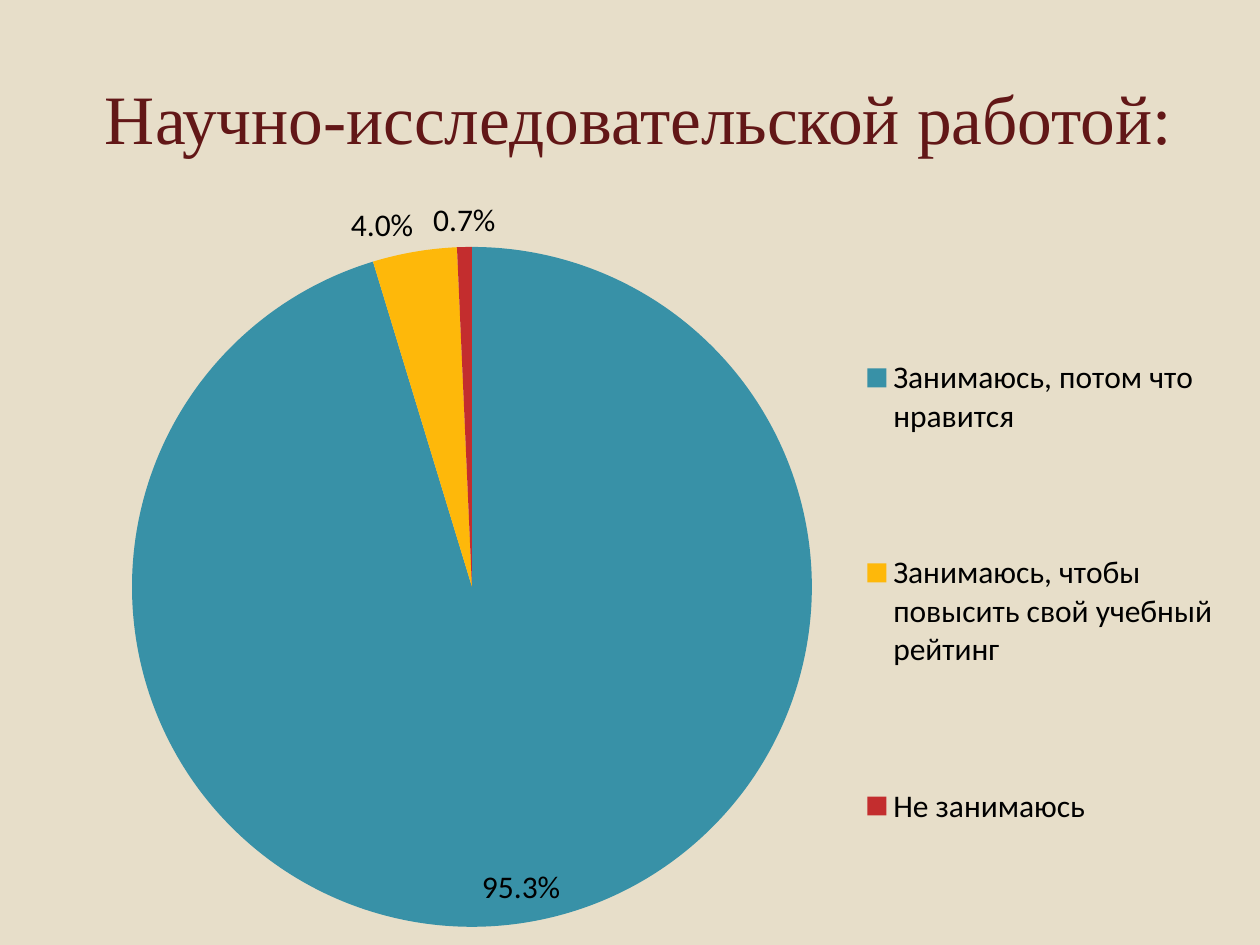
from lxml import etree
from pptx import Presentation
from pptx import util as u
from pptx.chart.data import CategoryChartData
from pptx.dml.color import RGBColor
from pptx.enum import chart as ch, text
from pptx.oxml.ns import qn

PX = u.Inches(1) // 126
COLORS = {
    "background": "E7DEC9",
    "title": "621717",
    "text": "000000",
}
ANSWERS = [
    ("Занимаюсь, потом что нравится", 95.3, "3891A7"),
    ("Занимаюсь, чтобы повысить свой учебный рейтинг", 4, "FEB80A"),
    ("Не занимаюсь", 0.7, "C32D2E"),
]
CHART_LEFT, CHART_TOP, CHART_WIDTH, CHART_HEIGHT = 84, 185, 1150, 760


def manual_layout(left, top, width, height, inner=False):
    layout = etree.Element(qn("c:layout"))
    manual = etree.SubElement(layout, qn("c:manualLayout"))
    settings = [("layoutTarget", "inner")] if inner else []
    settings += [
        ("xMode", "edge"),
        ("yMode", "edge"),
        ("x", (left - CHART_LEFT) / CHART_WIDTH),
        ("y", (top - CHART_TOP) / CHART_HEIGHT),
        ("w", width / CHART_WIDTH),
        ("h", height / CHART_HEIGHT),
    ]
    for tag, value in settings:
        etree.SubElement(manual, qn(f"c:{tag}")).set("val", str(value))
    return layout


prs = Presentation()
prs.slide_width = 1260 * PX
prs.slide_height = 945 * PX
slide = prs.slides.add_slide(prs.slide_layouts[6])
slide.background.fill.solid()
slide.background.fill.fore_color.rgb = RGBColor.from_string(COLORS["background"])

heading = slide.shapes.add_textbox(63 * PX, 38 * PX, 1134 * PX, 157 * PX).text_frame
heading.word_wrap = True
heading.vertical_anchor = text.MSO_ANCHOR.MIDDLE
heading.paragraphs[0].alignment = text.PP_ALIGN.CENTER
topic = heading.paragraphs[0].add_run()
topic.text = " Научно-исследовательской работой:"
topic.font.name = "Times New Roman"
topic.font.size = u.Pt(39.6)
topic.font.color.rgb = RGBColor.from_string(COLORS["title"])

survey = CategoryChartData()
survey.categories = [answer for answer, share, color in ANSWERS]
survey.add_series("Series 1", [share for answer, share, color in ANSWERS])
pie = slide.shapes.add_chart(
    ch.XL_CHART_TYPE.PIE,
    CHART_LEFT * PX, CHART_TOP * PX, CHART_WIDTH * PX, CHART_HEIGHT * PX,
    survey,
).chart
pie.has_title = False
pie.font.name = "Calibri"
pie.font.size = u.Pt(18)
pie.font.color.rgb = RGBColor.from_string(COLORS["text"])

pie.has_legend = True
pie.legend.position = ch.XL_LEGEND_POSITION.RIGHT
pie.legend.include_in_layout = False

plot = pie.plots[0]
plot.vary_by_categories = True
for index, (answer, share, color) in enumerate(ANSWERS):
    wedge = plot.series[0].points[index].format
    wedge.fill.solid()
    wedge.fill.fore_color.rgb = RGBColor.from_string(color)
    wedge.line.fill.background()

plot.has_data_labels = True
shares = plot.data_labels
shares.show_value = False
shares.show_percentage = True
shares.number_format = "0.0%"
shares.number_format_is_linked = False
shares.position = ch.XL_LABEL_POSITION.BEST_FIT

plot_area = pie.element.find(".//" + qn("c:plotArea"))
for old_layout in plot_area.findall(qn("c:layout")):
    plot_area.remove(old_layout)
plot_area.insert(0, manual_layout(132, 247, 680, 680, inner=True))

legend = pie.element.find(".//" + qn("c:legend"))
for old_layout in legend.findall(qn("c:layout")):
    legend.remove(old_layout)
legend.find(qn("c:legendPos")).addnext(manual_layout(856, 240, 368, 704))

prs.save("out.pptx")
